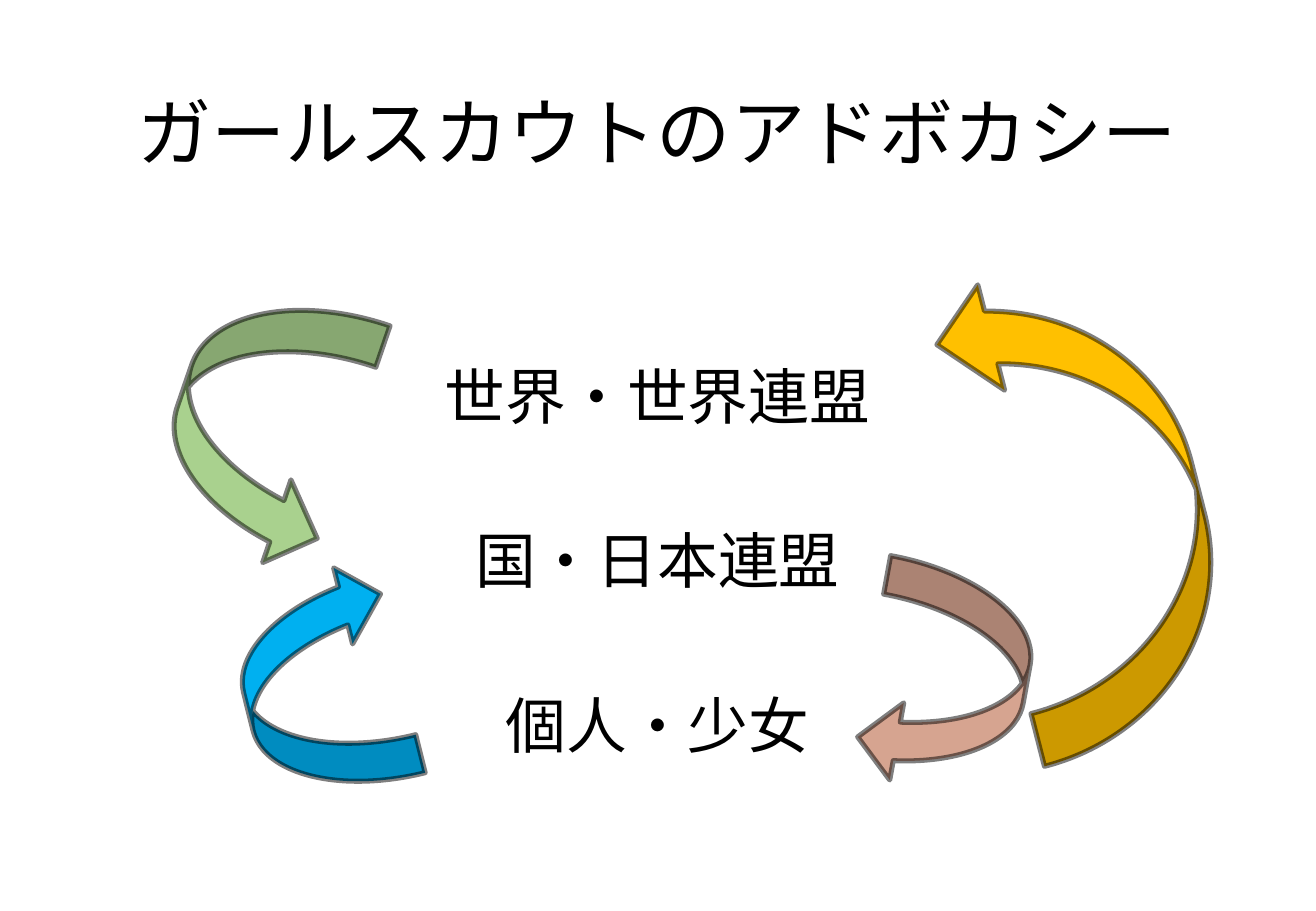
from pptx import Presentation
from pptx.dml.color import RGBColor
from pptx.enum.shapes import MSO_SHAPE as Preset
from pptx.enum.text import MSO_ANCHOR as Anchor, MSO_AUTO_SIZE as AutoSize, PP_ALIGN as Align
from pptx.oxml.ns import qn
from pptx.util import Inches, Pt
from lxml.etree import SubElement

BLACK = RGBColor(0x00, 0x00, 0x00)
PINK = RGBColor(0xD6, 0xA4, 0x90)
BLUE = RGBColor(0x00, 0xB0, 0xF0)
GREEN = RGBColor(0xA9, 0xD1, 0x8E)
GOLD = RGBColor(0xFF, 0xC0, 0x00)

TITLE = "ガールスカウトのアドボカシー"
LEVELS = ["世界・世界連盟", "国・日本連盟", "個人・少女"]
# preset, box, rotation, mirrored, fill
ARROWS = [
    (Preset.CURVED_DOWN_ARROW, (6.88, 4.95, 1.84, 1.29), 100.3, False, PINK),
    (Preset.CURVED_DOWN_ARROW, (1.73, 4.98, 1.84, 1.29), 256, False, BLUE),
    (Preset.CURVED_RIGHT_ARROW, (1.45, 2.39, 1.44, 2.21), 18.9, False, GREEN),
    (Preset.CURVED_LEFT_ARROW, (8.07, 2.12, 1.79, 4.03), 165.7, True, GOLD),
]


def set_values(target, values):
    for name, value in values.items():
        setattr(target, name, value)


def place(shape, box):
    names = ("left", "top", "width", "height")
    set_values(shape, dict(zip(names, map(Inches, box))))


def fill_placeholder(shape, box, lines, size, anchor, gap=0, first_spacing=0.9):
    """Write centred, unbulleted lines, with gap points between them."""
    place(shape, box)
    frame = shape.text_frame
    set_values(frame, {"text": "\n".join(lines), "word_wrap": True,
                       "auto_size": AutoSize.NONE, "vertical_anchor": anchor})
    for index, paragraph in enumerate(frame.paragraphs):
        properties = paragraph._p.get_or_add_pPr()
        properties.set("marL", "0")
        properties.set("indent", "0")
        SubElement(properties, qn("a:buNone"))
        set_values(paragraph, {
            "alignment": Align.CENTER,
            "line_spacing": 0.9 if index else first_spacing,
            "space_before": Pt(gap if index else 0),
        })
        for run in paragraph.runs:
            set_values(run.font, {"name": "Calibri", "size": Pt(size)})
            run.font.color.rgb = BLACK


def add_curved_arrow(slide, preset, box, rotation, mirrored, color):
    arrow = slide.shapes.add_shape(preset, *map(Inches, box))
    arrow.rotation = rotation
    arrow.shadow.inherit = False
    arrow.fill.solid()
    arrow.fill.fore_color.rgb = color
    arrow.line.width = Pt(3)
    arrow.line.color.rgb = BLACK
    line_color = arrow.line._ln.find(".//" + qn("a:srgbClr"))
    SubElement(line_color, qn("a:alpha"), val="50000")
    if mirrored:
        arrow._element.spPr.find(qn("a:xfrm")).set("flipH", "1")


def build_advocacy_slide(presentation):
    slide = presentation.slides.add_slide(presentation.slide_layouts[1])
    fill_placeholder(slide.shapes.title, (0.74, 0.4, 9.34, 1.45), [TITLE], 44, Anchor.MIDDLE)
    fill_placeholder(slide.placeholders[1], (0.74, 2, 9.34, 4.76), LEVELS, 36, Anchor.TOP,
                     gap=59, first_spacing=2.5)
    for arrow in ARROWS:
        add_curved_arrow(slide, *arrow)


def main():
    presentation = Presentation()
    set_values(presentation, {"slide_width": Inches(10.83), "slide_height": Inches(7.5)})
    build_advocacy_slide(presentation)
    presentation.save("out.pptx")


if __name__ == "__main__":
    main()
